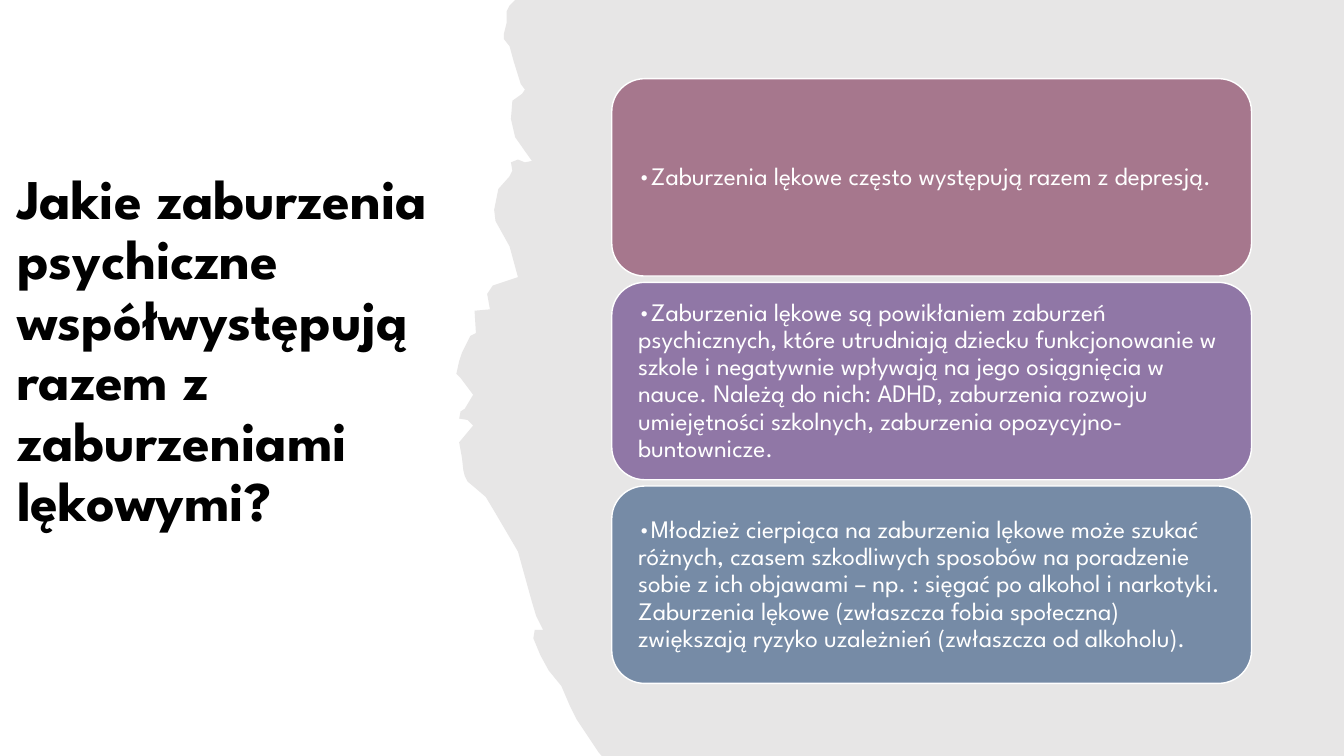
"""Builds a slide on mental disorders that occur together with anxiety disorders."""
import pptx
import pptx.dml.color
import pptx.enum.shapes
import pptx.enum.text
import pptx.util

Pt = pptx.util.Pt
RGBColor = pptx.dml.color.RGBColor

WHITE = RGBColor(0xFF, 0xFF, 0xFF)
BLACK = RGBColor(0x00, 0x00, 0x00)
GREY = RGBColor(0xE7, 0xE6, 0xE6)
ROSE = RGBColor(0xA6, 0x77, 0x8D)
VIOLET = RGBColor(0x90, 0x77, 0xA6)
SLATE = RGBColor(0x76, 0x8B, 0xA6)

FONT = "League Spartan"
WIDTH, HEIGHT = 960, 540
CARD_LEFT, CARD_TOP, CARD_WIDTH, CARD_HEIGHT, CARD_STEP = 437, 56.2, 457, 141, 145.5

TITLE = "Jakie zaburzenia psychiczne współwystępują razem z zaburzeniami lękowymi?"
CARDS = [
    (ROSE, "•Zaburzenia lękowe często występują razem z depresją."),
    (VIOLET, "•Zaburzenia lękowe są powikłaniem zaburzeń psychicznych, które "
             "utrudniają dziecku funkcjonowanie w szkole i negatywnie wpływają na "
             "jego osiągnięcia w nauce. Należą do nich: ADHD, zaburzenia rozwoju "
             "umiejętności szkolnych, zaburzenia opozycyjno-buntownicze."),
    (SLATE, "•Młodzież cierpiąca na zaburzenia lękowe może szukać różnych, czasem "
            "szkodliwych sposobów na poradzenie sobie z ich objawami – np. : sięgać "
            "po alkohol i narkotyki. Zaburzenia lękowe (zwłaszcza fobia społeczna) "
            "zwiększają ryzyko uzależnień (zwłaszcza od alkoholu)."),
]
TORN_EDGE = [
    (430.5, 540), (428.5, 538), (412.5, 513.5), (407, 504), (401, 490),
    (392.5, 479), (385.5, 468.5), (381, 456), (382.5, 450.5), (387.5, 450.5),
    (383, 440.5), (379.5, 430), (369.5, 394.5), (353, 365), (347, 355),
    (340.5, 349), (334, 344), (332, 340), (331, 335.5), (330, 327),
    (327.5, 316), (337.5, 304), (333.5, 300), (328.5, 299), (329, 294.5),
    (332.5, 291.5), (337.5, 282.5), (329, 270.5), (326, 267), (328.5, 258),
    (330.5, 252), (331, 250.5), (335.5, 240.5), (340.5, 237.5), (339, 222.5),
    (350.5, 221), (347.5, 210), (352, 204.5), (370, 198.5), (364.5, 176.5),
    (354, 158.5), (353, 150.5), (355.5, 135), (364.5, 126), (366, 122.5),
    (365, 115.5), (369.5, 114.5), (375, 116), (380, 115), (375, 108),
    (368.5, 98.5), (365, 85), (366.5, 72.5), (373, 67), (375, 64),
    (372, 60), (367, 44), (364.5, 33), (360.5, 28), (360, 24.5),
    (362.5, 16.5), (362, 8), (363.5, 3.5), (366.5, 1.5), (368, 0),
]


def write_text(shape, text, *, size, color, bold=False, after=0, margins=(7.2, 3.6, 7.2, 3.6)):
    frame = shape.text_frame
    frame.word_wrap = True
    frame.auto_size = pptx.enum.text.MSO_AUTO_SIZE.NONE
    frame.vertical_anchor = pptx.enum.text.MSO_ANCHOR.MIDDLE
    (frame.margin_left, frame.margin_top,
     frame.margin_right, frame.margin_bottom) = map(Pt, margins)
    para = frame.paragraphs[0]
    para.alignment = pptx.enum.text.PP_ALIGN.LEFT
    para.line_spacing = 0.9
    para.space_before = Pt(0)
    para.space_after = Pt(after)
    span = para.add_run()
    span.text = text
    span.font.name = FONT
    span.font.size = Pt(size)
    span.font.bold = bold
    span.font.color.rgb = color


def place_title(page):
    title = page.shapes.title
    title.left, title.top, title.width, title.height = Pt(5), Pt(59), Pt(340.5), Pt(428)
    write_text(title, TITLE, size=40, color=BLACK, bold=True, after=6,
               margins=(7.2, 3.6, 7.2, 46))


def add_torn_panel(page):
    builder = page.shapes.build_freeform(WIDTH, 0, scale=float(Pt(1)))
    builder.add_line_segments([(WIDTH, HEIGHT), *TORN_EDGE], close=True)
    panel = builder.convert_to_shape()
    panel.shadow.inherit = False
    panel.fill.solid()
    panel.fill.fore_color.rgb = GREY
    panel.line.fill.background()


def add_card(page, top, color, text):
    card = page.shapes.add_shape(
        pptx.enum.shapes.MSO_SHAPE.ROUNDED_RECTANGLE,
        Pt(CARD_LEFT), Pt(top), Pt(CARD_WIDTH), Pt(CARD_HEIGHT))
    card.shadow.inherit = False
    card.fill.solid()
    card.fill.fore_color.rgb = color
    card.line.color.rgb = WHITE
    card.line.width = Pt(1)
    write_text(card, text, size=18, color=WHITE, margins=(12, 12, 12, 12))


def main():
    deck = pptx.Presentation()
    deck.slide_width, deck.slide_height = Pt(WIDTH), Pt(HEIGHT)
    page = deck.slides.add_slide(deck.slide_layouts[5])
    page.background.fill.solid()
    page.background.fill.fore_color.rgb = WHITE
    place_title(page)
    add_torn_panel(page)
    for index, (color, text) in enumerate(CARDS):
        add_card(page, CARD_TOP + index * CARD_STEP, color, text)
    deck.save("out.pptx")


if __name__ == "__main__":
    main()
